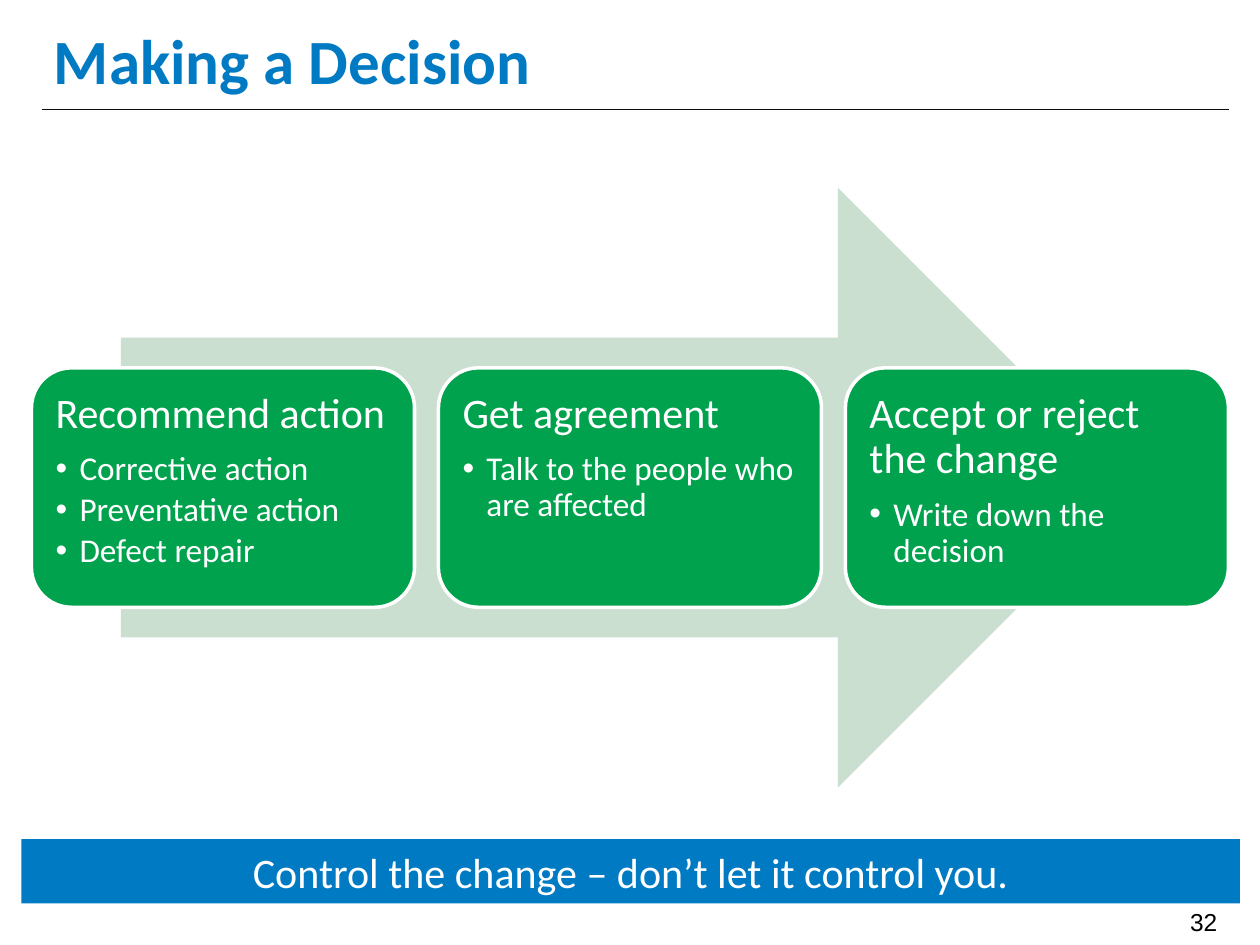
from dataclasses import dataclass

from lxml import etree
from pptx import Presentation
from pptx import util as u
from pptx.dml.color import RGBColor
from pptx.enum import shapes, text
from pptx.oxml.ns import qn

BLUE, GREEN, PALE, WHITE, BLACK = "007AC3", "00A24E", "CADFCF", "FFFFFF", "000000"
CARD_LEFT, CARD_TOP, CARD_W, CARD_H, CARD_STEP = 0.25, 2.92, 3.04, 1.9, 3.23
INDENT = 0.19


@dataclass
class Card:
    title: str
    bullets: list[str]


CARDS = [
    Card("Recommend action", ["Corrective action", "Preventative action", "Defect repair"]),
    Card("Get agreement", ["Talk to the people who are affected"]),
    Card("Accept or reject the change", ["Write down the decision"]),
]


def rgb(value: str) -> RGBColor:
    return RGBColor.from_string(value)


def add_bullet(p) -> None:
    pPr = p._p.get_or_add_pPr()
    pPr.set("lvl", "1")
    pPr.set("marL", str(u.Inches(INDENT)))
    pPr.set("indent", str(-u.Inches(INDENT)))
    color = etree.SubElement(pPr, qn("a:buClr"))
    etree.SubElement(color, qn("a:srgbClr")).set("val", WHITE)
    etree.SubElement(pPr, qn("a:buFont")).set("typeface", "Arial")
    etree.SubElement(pPr, qn("a:buChar")).set("char", "•")


def write(p, words: str, *, size: float, color: str = WHITE, font: str = "Calibri",
          bold: bool = False, align=text.PP_ALIGN.LEFT, spacing: float = 1.0,
          before: float = 0, bullet: bool = False) -> None:
    p.alignment = align
    p.line_spacing = spacing
    p.space_before = u.Pt(before)
    if bullet:
        add_bullet(p)
    r = p.add_run()
    r.text = words
    r.font.name = font
    r.font.size = u.Pt(size)
    r.font.bold = bold
    r.font.color.rgb = rgb(color)


def add_shape(s, kind, box: tuple, fill: str, line: str | None = None):
    sp = s.shapes.add_shape(kind, *map(u.Inches, box))
    sp.shadow.inherit = False
    sp.fill.solid()
    sp.fill.fore_color.rgb = rgb(fill)
    if line:
        sp.line.color.rgb = rgb(line)
        sp.line.width = u.Pt(2)
    else:
        sp.line.fill.background()
    return sp


def add_text(s, box: tuple, words: str, anchor=text.MSO_ANCHOR.TOP, **fmt) -> None:
    tf = s.shapes.add_textbox(*map(u.Inches, box)).text_frame
    tf.word_wrap = True
    tf.vertical_anchor = anchor
    write(tf.paragraphs[0], words, **fmt)


def add_rule(s) -> None:
    y = u.Inches(0.87)
    line = s.shapes.add_connector(
        shapes.MSO_CONNECTOR.STRAIGHT, u.Inches(0.33), y, u.Inches(9.75), y)
    line.line.color.rgb = rgb("0C0C0C")
    line.line.width = u.Pt(0.75)
    etree.SubElement(line._element.spPr, qn("a:effectLst"))


def add_card(s, left: float, card: Card) -> None:
    sp = add_shape(s, shapes.MSO_SHAPE.ROUNDED_RECTANGLE,
                   (left, CARD_TOP, CARD_W, CARD_H), GREEN, WHITE)
    sp.adjustments[0] = 0.167
    tf = sp.text_frame
    tf.word_wrap = True
    tf.vertical_anchor = text.MSO_ANCHOR.TOP
    tf.margin_left = tf.margin_right = tf.margin_top = tf.margin_bottom = u.Inches(0.1)
    write(tf.paragraphs[0], card.title, size=24, spacing=0.9)
    for i, item in enumerate(card.bullets):
        write(tf.add_paragraph(), item, size=19, spacing=0.9,
              before=2.9 if i else 8.4, bullet=True)


def main() -> None:
    prs = Presentation()
    prs.slide_width, prs.slide_height = u.Inches(10), u.Inches(7.5)
    s = prs.slides.add_slide(prs.slide_layouts[6])

    add_rule(s)
    add_text(s, (8.64, 7.15, 1.12, 0.34), "32", size=14, color=BLACK, font="Arial",
             align=text.PP_ALIGN.RIGHT)
    banner = add_shape(s, shapes.MSO_SHAPE.RECTANGLE, (0.17, 6.66, 9.67, 0.51), BLUE)
    banner.text_frame.vertical_anchor = text.MSO_ANCHOR.MIDDLE
    write(banner.text_frame.paragraphs[0], "Control the change – don’t let it control you.",
          size=24, align=text.PP_ALIGN.CENTER)

    add_shape(s, shapes.MSO_SHAPE.RIGHT_ARROW, (0.96, 1.49, 8.07, 4.76), PALE)
    for i, card in enumerate(CARDS):
        add_card(s, CARD_LEFT + i * CARD_STEP, card)

    add_text(s, (0.33, 0.08, 9.42, 0.78), "Making a Decision", text.MSO_ANCHOR.MIDDLE,
             size=36, color=BLUE, bold=True)
    prs.save("out.pptx")


if __name__ == "__main__":
    main()
